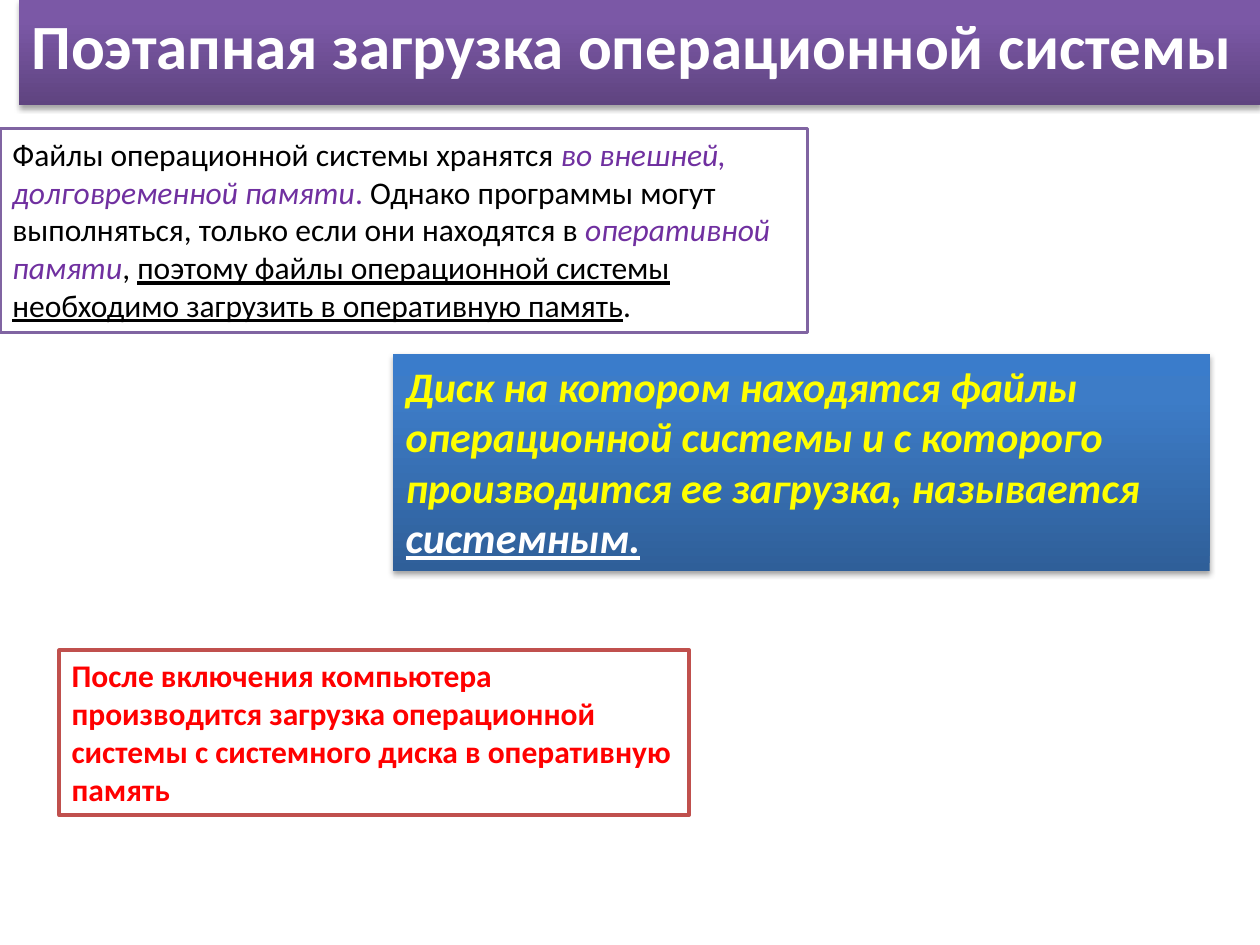
import copy

import pptx
import pptx.util
import pptx.dml.color
import pptx.enum.text
import pptx.oxml
import pptx.oxml.ns

Inches, Pt = pptx.util.Inches, pptx.util.Pt
RGBColor = pptx.dml.color.RGBColor
qn = pptx.oxml.ns.qn

WHITE = RGBColor(0xFF, 0xFF, 0xFF)
BLACK = RGBColor(0x00, 0x00, 0x00)
YELLOW = RGBColor(0xFF, 0xFF, 0x00)
RED = RGBColor(0xFF, 0x00, 0x00)
VIOLET = RGBColor(0x70, 0x30, 0xA0)
VIOLET_LINE = RGBColor(0x80, 0x64, 0xA2)
RED_LINE = RGBColor(0xC0, 0x50, 0x4D)

# Gradient stops from the bottom edge to the top edge
STOPS = (0, 0.8, 1)
PURPLE_SHADES = (RGBColor(0x5F, 0x44, 0x80), RGBColor(0x7B, 0x58, 0xA6),
                 RGBColor(0x7C, 0x57, 0xA8))
BLUE_SHADES = (RGBColor(0x2F, 0x5F, 0x99), RGBColor(0x3D, 0x7C, 0xC7),
               RGBColor(0x3A, 0x7C, 0xCB))

SHADOW = (
    '<a:outerShdw xmlns:a="http://schemas.openxmlformats.org/drawingml/2006/main"'
    ' blurRad="40000" dist="23000" dir="5400000" rotWithShape="0">'
    '<a:srgbClr val="000000"><a:alpha val="35000"/></a:srgbClr></a:outerShdw>')


def place(s, left, top, width, height):
    s.left, s.top = Inches(left), Inches(top)
    s.width, s.height = Inches(width), Inches(height)


def style_raised(s, shades):
    """Vertical gradient with a soft shadow below and no outline."""
    s.fill.gradient()
    s.fill.gradient_angle = 90
    stop_list = s._element.spPr.find(".//" + qn("a:gsLst"))
    stop_list.append(copy.deepcopy(stop_list[-1]))
    for stop, position, color in zip(s.fill.gradient_stops, STOPS, shades):
        stop.position = position
        stop.color.rgb = color
    s.line.fill.background()
    s.shadow.inherit = False
    effects = s._element.spPr.find(qn("a:effectLst"))
    effects.append(pptx.oxml.parse_xml(SHADOW))


def style_framed(s, color):
    """White box with a coloured outline."""
    s.fill.solid()
    s.fill.fore_color.rgb = WHITE
    s.line.color.rgb = color
    s.line.width = Pt(2)


def write(s, runs, size, bold=False, wrap=True):
    """Each run is (text, colour, flags), where flags may hold i and u."""
    tf = s.text_frame
    tf.word_wrap = wrap
    tf.auto_size = pptx.enum.text.MSO_AUTO_SIZE.SHAPE_TO_FIT_TEXT
    tf.vertical_anchor = pptx.enum.text.MSO_ANCHOR.TOP
    p = tf.paragraphs[0]
    p.alignment = pptx.enum.text.PP_ALIGN.LEFT
    for text, color, flags in runs:
        r = p.add_run()
        r.text = text
        r.font.name = "Calibri"
        r.font.size = Pt(size)
        r.font.bold = bold
        r.font.italic = "i" in flags
        r.font.underline = "u" in flags
        r.font.color.rgb = color


def add_box(slide, left, top, width, height):
    return slide.shapes.add_textbox(Inches(left), Inches(top),
                                    Inches(width), Inches(height))


def main():
    prs = pptx.Presentation()
    prs.slide_width, prs.slide_height = Inches(10), Inches(7.5)
    slide = prs.slides.add_slide(prs.slide_layouts[5])

    # Title band
    title = slide.shapes.title
    place(title, 0.15, 0, 9.85, 0.71)
    style_raised(title, PURPLE_SHADES)
    write(title, [("Поэтапная загрузка операционной системы", WHITE, "")],
          36, bold=True, wrap=False)

    # Where the system files are kept
    storage = add_box(slide, 0, 1.02, 6.41, 1.62)
    style_framed(storage, VIOLET_LINE)
    write(storage, [
        ("Файлы операционной системы хранятся ", BLACK, ""),
        ("во внешней, долговременной памяти", VIOLET, "i"),
        (".", VIOLET, ""),
        (" Однако программы могут выполняться, только если они находятся в ",
         BLACK, ""),
        ("оперативной памяти", VIOLET, "i"),
        (", ", BLACK, ""),
        ("поэтому файлы операционной системы необходимо загрузить "
         "в оперативную память", BLACK, "u"),
        (".", BLACK, ""),
    ], 18)

    # Definition of the system disk
    definition = add_box(slide, 3.12, 2.81, 6.48, 1.72)
    style_raised(definition, BLUE_SHADES)
    write(definition, [
        ("Диск на котором находятся файлы операционной системы и с которого "
         "производится ее загрузка, называется ", YELLOW, "i"),
        ("системным.", WHITE, "iu"),
    ], 24, bold=True)

    # What happens at power-on
    startup = add_box(slide, 0.47, 5.16, 5, 1.31)
    style_framed(startup, RED_LINE)
    write(startup, [
        ("После включения компьютера производится загрузка операционной "
         "системы с системного диска в оперативную память", RED, ""),
    ], 18, bold=True)

    prs.save("out.pptx")


if __name__ == "__main__":
    main()
